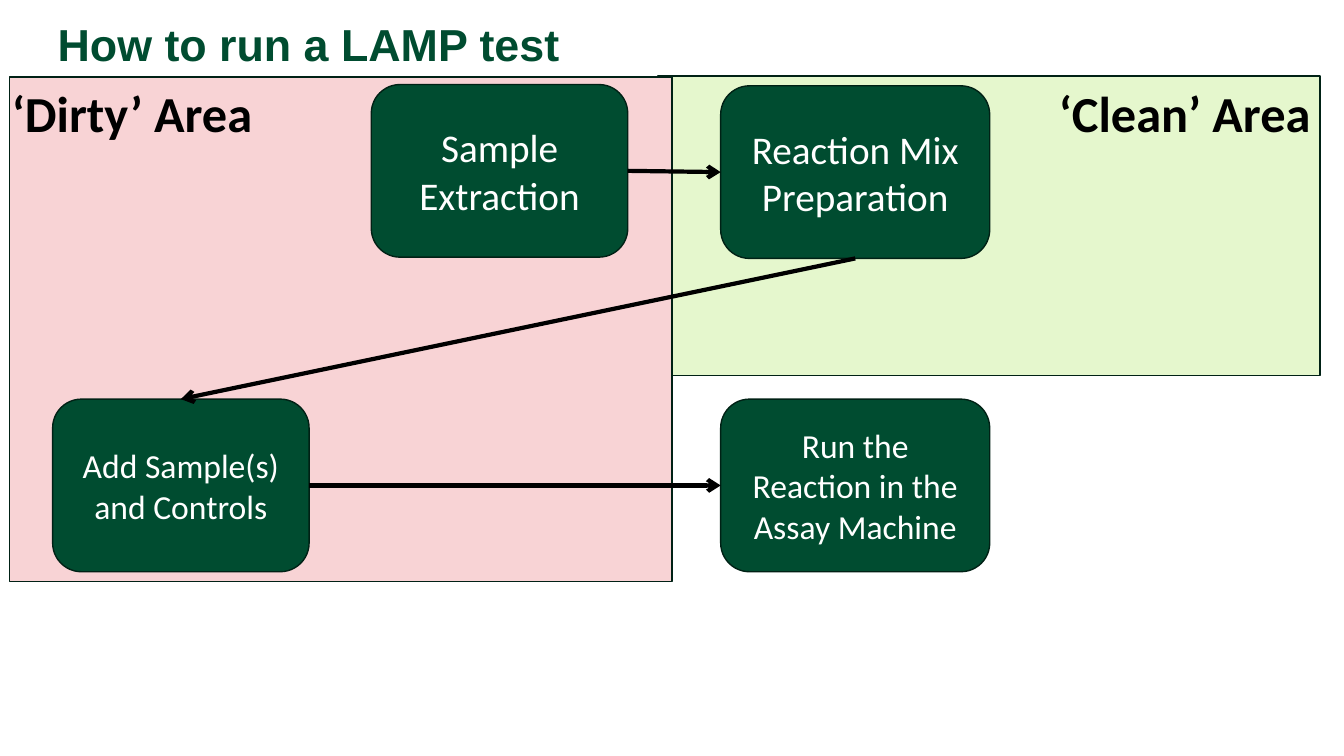
from dataclasses import dataclass

import pptx
import pptx.dml.color
import pptx.enum.shapes
import pptx.enum.text
import pptx.oxml
import pptx.oxml.ns
import pptx.slide
import pptx.util
from pptx.shapes.autoshape import Shape

Pt = pptx.util.Pt
RGBColor = pptx.dml.color.RGBColor
ShapeType = pptx.enum.shapes.MSO_SHAPE
Align = pptx.enum.text.PP_ALIGN
Anchor = pptx.enum.text.MSO_ANCHOR
AutoSize = pptx.enum.text.MSO_AUTO_SIZE


@dataclass(frozen=True)
class Theme:
    green: RGBColor = RGBColor(0x00, 0x4C, 0x30)
    outline: RGBColor = RGBColor(0x00, 0x21, 0x15)
    clean: RGBColor = RGBColor(0xE5, 0xF7, 0xCD)
    dirty: RGBColor = RGBColor(0xF8, 0xD3, 0xD5)
    black: RGBColor = RGBColor(0, 0, 0)
    white: RGBColor = RGBColor(255, 255, 255)
    title_font: str = "Arial"
    body_font: str = "Calibri"
    title_size: float = 32
    label_size: float = 36
    large_step: float = 28
    small_step: float = 24


THEME = Theme()


@dataclass(frozen=True)
class Box:
    left: float
    top: float
    width: float
    height: float

    def lengths(self) -> tuple[int, int, int, int]:
        return Pt(self.left), Pt(self.top), Pt(self.width), Pt(self.height)


@dataclass(frozen=True)
class Area:
    box: Box
    fill: RGBColor


@dataclass(frozen=True)
class Label:
    text: str
    left: float


@dataclass(frozen=True)
class Step:
    text: str
    box: Box
    size: float


@dataclass(frozen=True)
class Arrow:
    start: str
    start_site: int
    end: str
    end_site: int


# Connection sites of a rounded rectangle
TOP, LEFT, BOTTOM, RIGHT = range(4)

# Slide content
TITLE = "How to run a LAMP test"
TITLE_BOX = Box(-77.8, 19.4, 596.9, 35.3)
AREAS = [
    Area(Box(470, 54.2, 473, 214), THEME.clean),
    Area(Box(7, 54.9, 473, 360.5), THEME.dirty),
]
LABEL_TOP, LABEL_WIDTH, LABEL_HEIGHT = 54.9, 252.7, 50.9
LABELS = [Label("‘Dirty’ Area", -31.9), Label("‘Clean’ Area", 720)]

DIRTY_WIDTH, CLEAN_WIDTH, STEP_HEIGHT = 183.2, 192.2, 123.3
CLEAN_LEFT, LOWER_TOP = 514.8, 285.1
STEPS = {
    "extract": Step("Sample Extraction",
                    Box(265.2, 60.4, DIRTY_WIDTH, STEP_HEIGHT), THEME.large_step),
    "mix": Step("Reaction Mix Preparation",
                Box(CLEAN_LEFT, 61.3, CLEAN_WIDTH, STEP_HEIGHT), THEME.large_step),
    "run": Step("Run the Reaction in the Assay Machine",
                Box(CLEAN_LEFT, LOWER_TOP, CLEAN_WIDTH, STEP_HEIGHT), THEME.small_step),
    "add": Step("Add Sample(s) and Controls",
                Box(37.6, LOWER_TOP, DIRTY_WIDTH, STEP_HEIGHT), THEME.small_step),
}
ARROWS = [
    Arrow("extract", RIGHT, "mix", LEFT),
    Arrow("add", RIGHT, "run", LEFT),
    Arrow("mix", BOTTOM, "add", TOP),
]


def write_text(shape: Shape, text: str, font: str, size: float,
               color: RGBColor, bold: bool, anchor: Anchor) -> None:
    frame = shape.text_frame
    frame.word_wrap = True
    frame.vertical_anchor = anchor
    paragraph = frame.paragraphs[0]
    paragraph.text = text
    paragraph.alignment = Align.CENTER
    paragraph.font.name = font
    paragraph.font.size = Pt(size)
    paragraph.font.bold = bold
    paragraph.font.color.rgb = color


def add_title(slide: pptx.slide.Slide) -> None:
    title = slide.shapes.title
    title.left, title.top, title.width, title.height = TITLE_BOX.lengths()
    write_text(title, TITLE, THEME.title_font, THEME.title_size,
               THEME.green, True, Anchor.BOTTOM)
    title.text_frame.auto_size = AutoSize.NONE
    title.text_frame.paragraphs[0].line_spacing = 0.9


def add_panel(slide: pptx.slide.Slide, kind: ShapeType, box: Box, fill: RGBColor) -> Shape:
    shape = slide.shapes.add_shape(kind, *box.lengths())
    shape.shadow.inherit = False
    shape.fill.solid()
    shape.fill.fore_color.rgb = fill
    shape.line.color.rgb = THEME.outline
    shape.line.width = Pt(1)
    return shape


def add_step(slide: pptx.slide.Slide, step: Step) -> Shape:
    shape = add_panel(slide, ShapeType.ROUNDED_RECTANGLE, step.box, THEME.green)
    write_text(shape, step.text, THEME.body_font, step.size,
               THEME.white, False, Anchor.MIDDLE)
    return shape


def add_arrow(slide: pptx.slide.Slide, arrow: Arrow, shapes: dict[str, Shape]) -> None:
    connector = slide.shapes.add_connector(
        pptx.enum.shapes.MSO_CONNECTOR.STRAIGHT, 0, 0, 0, 0)
    connector.begin_connect(shapes[arrow.start], arrow.start_site)
    connector.end_connect(shapes[arrow.end], arrow.end_site)
    connector.line.color.rgb = THEME.black
    connector.line.width = Pt(3)
    # Arrowhead, and no shadow
    properties = connector._element.spPr
    line = properties.find(pptx.oxml.ns.qn("a:ln"))
    namespace = pptx.oxml.ns.nsdecls("a")
    line.append(pptx.oxml.parse_xml(f'<a:tailEnd {namespace} type="arrow"/>'))
    properties.append(pptx.oxml.parse_xml(f"<a:effectLst {namespace}/>"))


def add_label(slide: pptx.slide.Slide, label: Label) -> None:
    box = Box(label.left, LABEL_TOP, LABEL_WIDTH, LABEL_HEIGHT)
    shape = slide.shapes.add_textbox(*box.lengths())
    write_text(shape, label.text, THEME.body_font, THEME.label_size,
               THEME.black, True, Anchor.TOP)
    shape.text_frame.auto_size = AutoSize.SHAPE_TO_FIT_TEXT


def main() -> None:
    presentation = pptx.Presentation()
    presentation.slide_width, presentation.slide_height = Pt(960), Pt(540)
    slide = presentation.slides.add_slide(presentation.slide_layouts[5])

    add_title(slide)
    for area in AREAS:
        add_panel(slide, ShapeType.RECTANGLE, area.box, area.fill)
    shapes = {name: add_step(slide, step) for name, step in STEPS.items()}
    for arrow in ARROWS:
        add_arrow(slide, arrow, shapes)
    for label in LABELS:
        add_label(slide, label)

    presentation.save("out.pptx")


if __name__ == "__main__":
    main()
